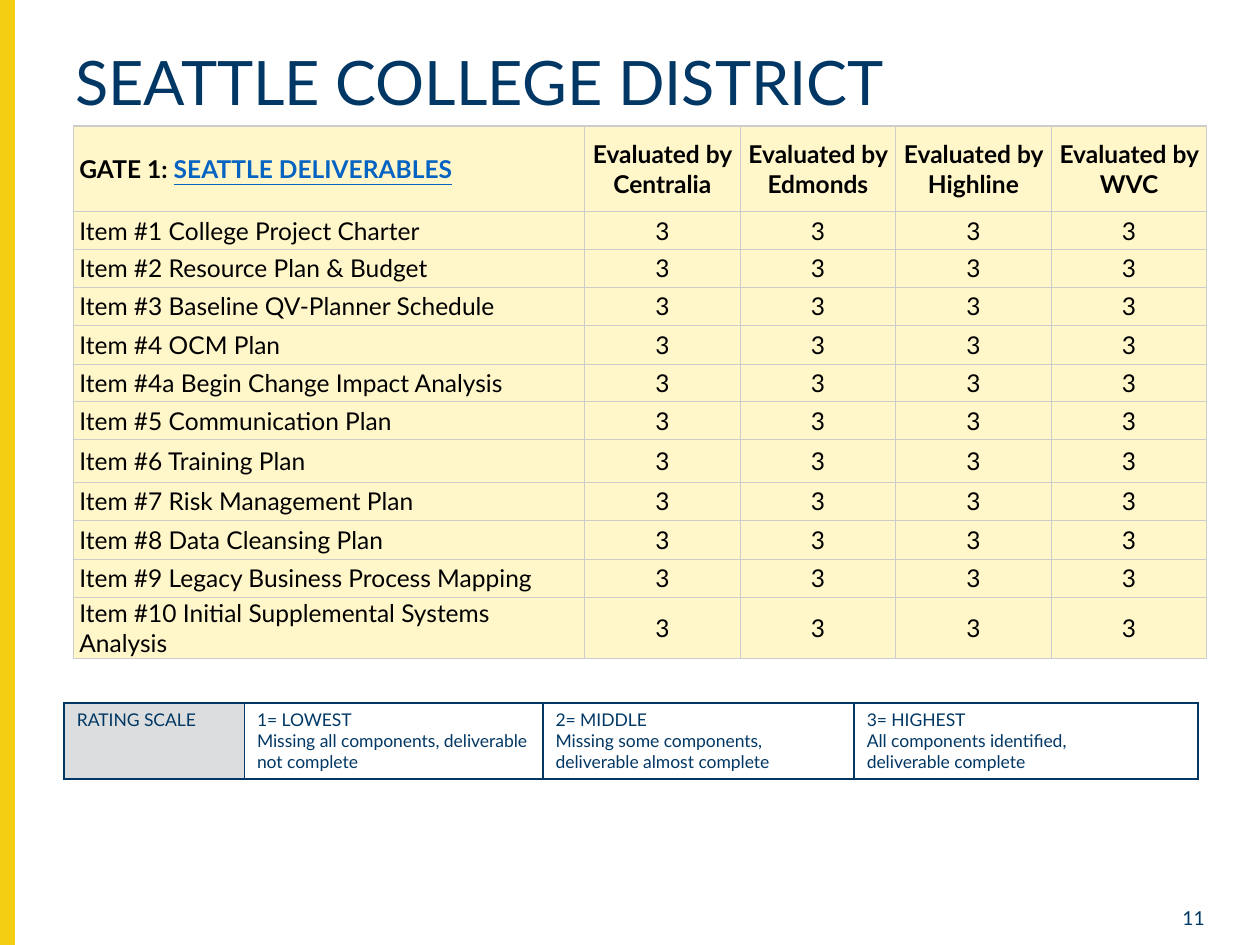
from dataclasses import dataclass
from lxml.etree import SubElement
from pptx import Presentation
from pptx.dml.color import RGBColor as RGB
from pptx.enum.shapes import MSO_SHAPE as Shape
from pptx.enum.text import MSO_ANCHOR as Anchor, PP_ALIGN as Align
from pptx.oxml.ns import qn
from pptx.util import Inches, Pt


@dataclass(frozen=True)
class Theme:
    face: str = "Lato"
    navy: str = "003764"
    gold: str = "F4CE12"
    cream: str = "FFF6CA"
    gray: str = "DBDDDE"
    rule: str = "CCCCCC"
    link: str = "0563C1"
    ink: str = "000000"
    head: float = 35
    body: float = 14
    page: float = 11
    note: float = 10


T = Theme()
WIDE, HIGH = 10, 7.5
COLLEGES = ["Centralia", "Edmonds", "Highline", "WVC"]
ITEMS = [
    "#1 College Project Charter",
    "#2 Resource Plan & Budget",
    "#3 Baseline QV-Planner Schedule",
    "#4 OCM Plan",
    "#4a Begin Change Impact Analysis",
    "#5 Communication Plan",
    "#6 Training Plan",
    "#7 Risk Management Plan",
    "#8 Data Cleansing Plan",
    "#9 Legacy Business Process Mapping",
    "#10 Initial Supplemental Systems Analysis",
]
SCORE = "3"
SCALE = [
    ["RATING SCALE"],
    ["1= LOWEST", "Missing all components, deliverable not complete"],
    ["2= MIDDLE", "Missing some components, deliverable almost complete"],
    ["3= HIGHEST", "All components identified,", "deliverable complete"],
]


def style(font, size, color, bold=False):
    font.name, font.size, font.bold = T.face, Pt(size), bold
    font.color.rgb = RGB.from_string(color)


def write(frame, lines, size, color, bold=False, align=Align.LEFT):
    """Put each line in its own paragraph."""
    frame.word_wrap = True
    for i, line in enumerate(lines):
        para = frame.add_paragraph() if i else frame.paragraphs[0]
        para.text, para.alignment = line, align
        style(para.font, size, color, bold)


def edge(cell, color, width):
    """Draw all four borders of a cell, ahead of its fill."""
    props = cell._tc.get_or_add_tcPr()
    for i, side in enumerate(("lnL", "lnR", "lnT", "lnB")):
        line = SubElement(props, qn("a:" + side), w=str(Pt(width)))
        fill = SubElement(line, qn("a:solidFill"))
        SubElement(fill, qn("a:srgbClr"), val=color)
        props.insert(i, line)


def paint(cell, color):
    cell.fill.solid()
    cell.fill.fore_color.rgb = RGB.from_string(color)


def grid(slide, box, cols, rows):
    """Add a plain table with the given column widths and row heights."""
    frame = slide.shapes.add_table(len(rows), len(cols), *map(Inches, box))
    table = frame.table
    table.first_row = table.horz_banding = False
    for col, width in zip(table.columns, cols):
        col.width = Inches(width)
    for row, height in zip(table.rows, rows):
        row.height = Inches(height)
    return table


def side_bar(slide, box):
    bar = slide.shapes.add_shape(Shape.RECTANGLE, *map(Inches, box))
    bar.shadow.inherit = False
    bar.fill.solid()
    bar.fill.fore_color.rgb = bar.line.color.rgb = RGB.from_string(T.gold)
    bar.line.width = Pt(1)


def label(slide, box, text, size, align=Align.LEFT, space=1.0):
    frame = slide.shapes.add_textbox(*map(Inches, box)).text_frame
    write(frame, [text], size, T.navy, align=align)
    frame.paragraphs[0].line_spacing = space


def gate_head(cell):
    """Write the gate name and its link-styled title."""
    para = cell.text_frame.paragraphs[0]
    for text, color in (("GATE 1: ", T.ink), ("SEATTLE DELIVERABLES", T.link)):
        run = para.add_run()
        run.text = text
        style(run.font, T.body, color, True)
        run.font.underline = color == T.link


def score_table(slide, box):
    first = 4.06
    step = (box[2] - first) / len(COLLEGES)
    rows = [0.68] + [0.3] * len(ITEMS)
    rows[4] = rows[9] = 0.31
    rows[7], rows[-1] = 0.34, 0.42
    table = grid(slide, box, [first] + [step] * len(COLLEGES), rows)
    data = [[""] + [f"Evaluated by {name}" for name in COLLEGES]]
    data += [[f"Item {item}"] + [SCORE] * len(COLLEGES) for item in ITEMS]
    for r, line in enumerate(data):
        for c, text in enumerate(line):
            cell = table.cell(r, c)
            cell.vertical_anchor = Anchor.MIDDLE
            cell.margin_left = Inches(0.02 if c else 0.05)
            cell.margin_right = Inches(0.02)
            cell.margin_top = cell.margin_bottom = Inches(0.01)
            paint(cell, T.cream)
            edge(cell, T.rule, 0.75)
            if r or c:
                write(cell.text_frame, [text], T.body, T.ink, r == 0,
                      Align.CENTER if c else Align.LEFT)
    gate_head(table.cell(0, 0))


def scale_table(slide, box):
    table = grid(slide, box, [1.43, 2.37, 2.47, 2.73], [0.57])
    for c, lines in enumerate(SCALE):
        cell = table.cell(0, c)
        if c:
            cell.fill.background()
        else:
            paint(cell, T.gray)
        edge(cell, T.navy, 1)
        write(cell.text_frame, lines, T.note, T.navy)


def main():
    deck = Presentation()
    deck.slide_width, deck.slide_height = Inches(WIDE), Inches(HIGH)
    slide = deck.slides.add_slide(deck.slide_layouts[6])
    side_bar(slide, (0, 0, 0.11, HIGH))
    label(slide, (0.5, 0.37, 9, 0.49), "SEATTLE COLLEGE DISTRICT", T.head,
          space=0.9)
    score_table(slide, (0.58, 1, 9, 4.16))
    label(slide, (9.2, 7.14, 0.5, 0.21), "11 ", T.page, Align.RIGHT)
    scale_table(slide, (0.51, 5.58, 9, 0.57))
    deck.save("out.pptx")


if __name__ == "__main__":
    main()
